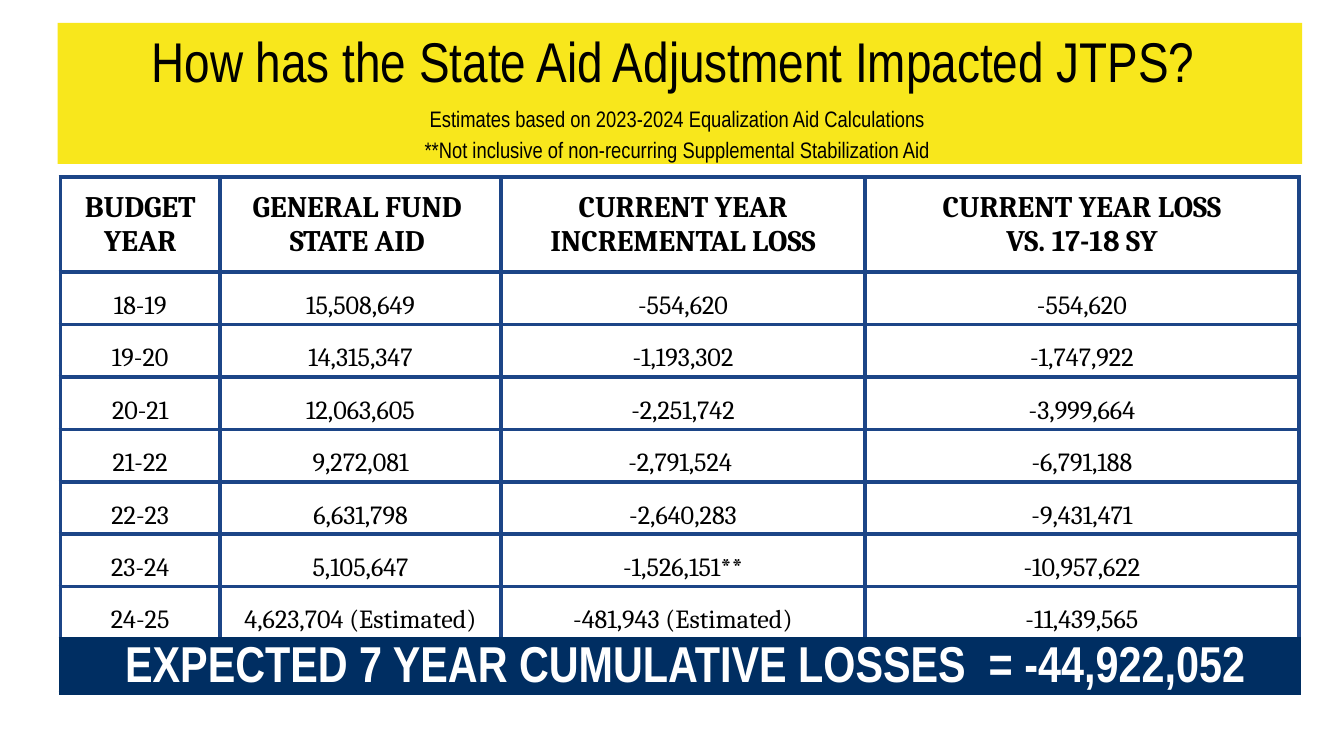
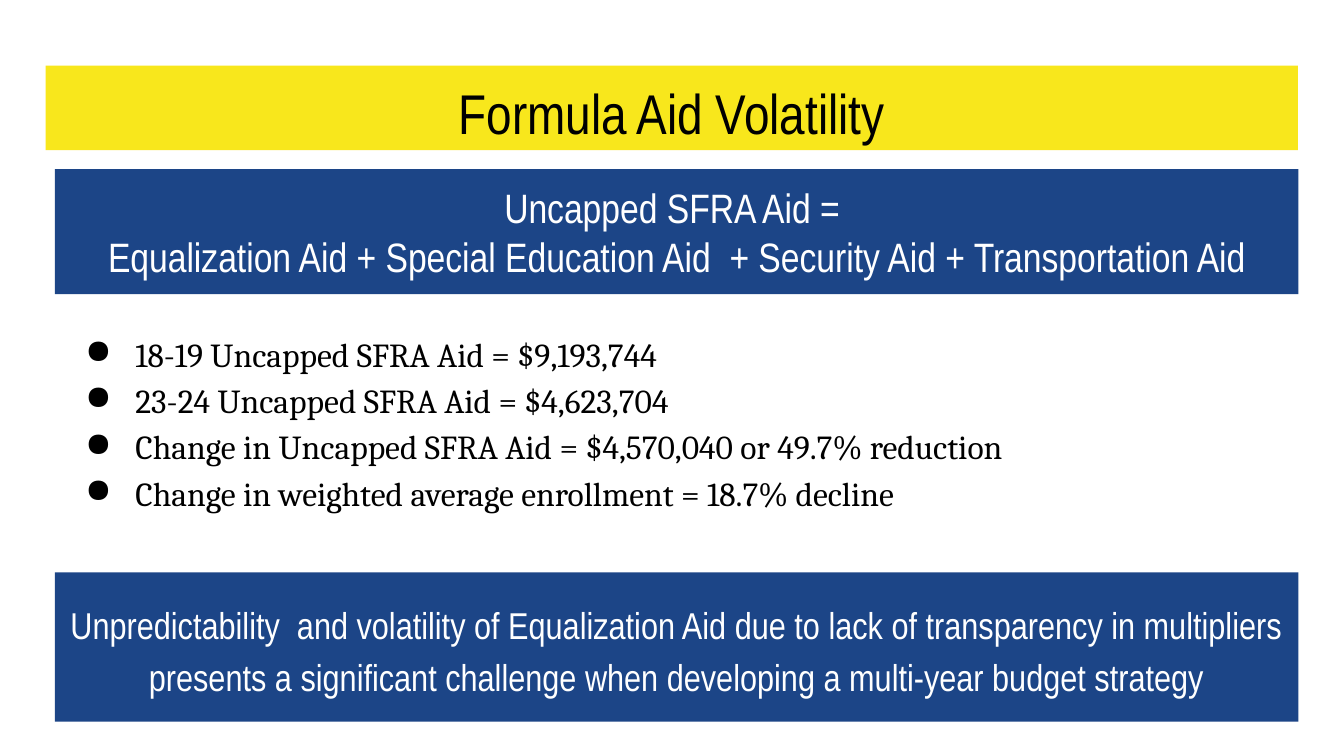
from dataclasses import dataclass

from lxml.etree import SubElement
from pptx import Presentation
from pptx.dml.color import RGBColor
from pptx.enum.shapes import MSO_SHAPE
from pptx.enum.text import MSO_ANCHOR, MSO_AUTO_SIZE, PP_ALIGN
from pptx.oxml import parse_xml
from pptx.oxml.ns import nsdecls, qn
from pptx.util import Cm, Pt


@dataclass(frozen=True)
class Theme:
    yellow: str = "F8E71C"
    blue: str = "1C4587"
    navy: str = "002E62"
    black: str = "000000"
    white: str = "FFFFFF"
    heading_font: str = "Arial Narrow"
    body_font: str = "Cambria"
    title_size: int = 30
    note_size: int = 12
    total_size: int = 27
    formula_size: int = 22
    warning_size: int = 20
    list_size: int = 18
    header_size: int = 16
    cell_size: int = 14
    border_width: float = 2.25


THEME = Theme()
INSET = 0.25

HEADINGS = ["BUDGET YEAR", "GENERAL FUND \nSTATE AID ",
            "CURRENT YEAR INCREMENTAL LOSS", "CURRENT YEAR LOSS\nVS. 17-18 SY"]
AID_BY_YEAR = [
    ["18-19", "15,508,649", "-554,620", "-554,620"],
    ["19-20", "14,315,347", "-1,193,302", "-1,747,922"],
    ["20-21", "12,063,605", "-2,251,742", "-3,999,664"],
    ["21-22", "9,272,081", "-2,791,524 ", "-6,791,188"],
    ["22-23", "6,631,798", "-2,640,283", "-9,431,471"],
    ["23-24", "5,105,647", "-1,526,151**", "-10,957,622"],
    ["24-25", "4,623,704 (Estimated)", "-481,943 (Estimated)", "-11,439,565"],
]
TOTAL = " EXPECTED 7 YEAR CUMULATIVE LOSSES  = -44,922,052"
COLUMN_WIDTHS = [3.02, 5.31, 6.88, 8.2]
HEADER_HEIGHT, ROW_HEIGHT = 1.52, 0.99


# Text and fill
def paint(target, color):
    target.fill.solid()
    target.fill.fore_color.rgb = RGBColor.from_string(color)


def style_paragraph(paragraph, size, color=THEME.black, font=THEME.heading_font,
                    bold=False, align=PP_ALIGN.CENTER, spacing=1.0):
    paragraph.alignment = align
    paragraph.line_spacing = spacing
    for run in paragraph.runs:
        run.font.name = font
        run.font.size = Pt(size)
        run.font.bold = bold
        run.font.color.rgb = RGBColor.from_string(color)


def write(frame, text, size, **style):
    frame.text = text
    for paragraph in frame.paragraphs:
        style_paragraph(paragraph, size, **style)


def set_frame(frame, anchor, top_inset=INSET):
    frame.word_wrap = True
    frame.auto_size = MSO_AUTO_SIZE.NONE
    frame.vertical_anchor = anchor
    frame.margin_left = frame.margin_right = frame.margin_bottom = Cm(INSET)
    frame.margin_top = Cm(top_inset)


# Title band, with optional smaller notes under the title
def add_title(slide, text, box, notes=(), top_inset=INSET):
    title = slide.shapes.title
    title.left, title.top, title.width, title.height = map(Cm, box)
    paint(title, THEME.yellow)
    frame = title.text_frame
    set_frame(frame, MSO_ANCHOR.TOP, top_inset)
    write(frame, text, THEME.title_size)
    for note, space in notes:
        line = frame.add_paragraph()
        line.text = note
        line.space_before = Pt(space)
        style_paragraph(line, THEME.note_size)


# Blue statement band
def add_band(slide, text, box, size, spacing=1.0):
    band = slide.shapes.add_shape(MSO_SHAPE.RECTANGLE, *map(Cm, box))
    band.shadow.inherit = False
    paint(band, THEME.blue)
    band.line.fill.background()
    set_frame(band.text_frame, MSO_ANCHOR.MIDDLE)
    write(band.text_frame, text, size, color=THEME.white, spacing=spacing)


# Bulleted list
def add_bullets(slide, items, box):
    facts = slide.shapes.add_textbox(*map(Cm, box)).text_frame
    set_frame(facts, MSO_ANCHOR.TOP)
    write(facts, "\n".join(items), THEME.list_size, font=THEME.body_font,
          align=PP_ALIGN.LEFT, spacing=1.15)
    for paragraph in facts.paragraphs:
        properties = paragraph._p.get_or_add_pPr()
        properties.set("marL", str(Cm(1.27)))
        properties.set("indent", str(Cm(-0.95)))
        bullet_color = SubElement(properties, qn("a:buClr"))
        SubElement(bullet_color, qn("a:srgbClr"), val=THEME.black)
        SubElement(properties, qn("a:buChar"), char="●")


# Table
def set_borders(cell, color, bottom=None):
    sides = {"lnL": color, "lnR": color, "lnT": color, "lnB": bottom or color}
    properties = cell._tc.get_or_add_tcPr()
    for position, (side, side_color) in enumerate(sides.items()):
        properties.insert(position, parse_xml(
            f'<a:{side} {nsdecls("a")} w="{Pt(THEME.border_width)}"><a:solidFill>'
            f'<a:srgbClr val="{side_color}"/></a:solidFill></a:{side}>'))


def fill_cell(cell, text, size, margin=0.0, anchor=MSO_ANCHOR.MIDDLE, **style):
    cell.margin_left = cell.margin_right = Cm(margin)
    cell.margin_top = cell.margin_bottom = Cm(margin)
    cell.vertical_anchor = anchor
    write(cell.text_frame, text, size, **style)


def add_aid_table(slide, left, top):
    row_count = len(AID_BY_YEAR) + 2
    height = HEADER_HEIGHT + ROW_HEIGHT * (row_count - 1)
    table = slide.shapes.add_table(row_count, len(HEADINGS), Cm(left), Cm(top),
                                   Cm(sum(COLUMN_WIDTHS)), Cm(height)).table
    table.first_row = table.horz_banding = False
    for column, width in zip(table.columns, COLUMN_WIDTHS):
        column.width = Cm(width)
    for index, row in enumerate(table.rows):
        row.height = Cm(ROW_HEIGHT if index else HEADER_HEIGHT)

    for column, heading in enumerate(HEADINGS):
        fill_cell(table.cell(0, column), heading, THEME.header_size, INSET,
                  MSO_ANCHOR.TOP, font=THEME.body_font, bold=True)
    for index, year in enumerate(AID_BY_YEAR, start=1):
        for column, value in enumerate(year):
            fill_cell(table.cell(index, column), value, THEME.cell_size,
                      font=THEME.body_font, spacing=1.5)

    # Total row across all columns
    total_row = row_count - 1
    total = table.cell(total_row, 0)
    total.merge(table.cell(total_row, len(HEADINGS) - 1))
    fill_cell(total, TOTAL, THEME.total_size, color=THEME.white, bold=True, spacing=1.15)

    for index in range(row_count):
        for column in range(len(HEADINGS)):
            cell = table.cell(index, column)
            if index == total_row:
                paint(cell, THEME.navy)
                set_borders(cell, THEME.navy)
            else:
                cell.fill.background()
                above_total = index == total_row - 1
                set_borders(cell, THEME.blue, THEME.navy if above_total else None)


# Slides
def build_impact(slide):
    add_title(slide, "How has the State Aid Adjustment Impacted JTPS? ",
              (1.09, 0.43, 23.52, 2.67), top_inset=0.08,
              notes=[("Estimates based on 2023-2024 Equalization Aid Calculations ", 6),
                     ("**Not inclusive of non-recurring Supplemental Stabilization Aid ", 2)])
    add_aid_table(slide, 1.14, 3.35)


def build_volatility(slide):
    left, width = 1.04, 23.5
    add_title(slide, "Formula Aid Volatility", (0.86, 1.24, 23.67, 1.6))
    add_band(slide, "Uncapped SFRA Aid = \nEqualization Aid + Special Education Aid  "
             "+ Security Aid + Transportation Aid",
             (left, 3.2, width, 2.36), THEME.formula_size)
    add_bullets(slide, ["18-19 Uncapped SFRA Aid = $9,193,744",
                        "23-24 Uncapped SFRA Aid = $4,623,704",
                        "Change in Uncapped SFRA Aid = $4,570,040 or 49.7% reduction",
                        "Change in weighted average enrollment = 18.7% decline"],
                (left, 5.94, width, 4.22))
    add_band(slide, "Unpredictability  and volatility of Equalization Aid due to lack of "
             "transparency in multipliers presents a significant challenge when "
             "developing a multi-year budget strategy",
             (left, 10.82, width, 2.82), THEME.warning_size, spacing=1.15)


def main():
    deck = Presentation()
    deck.slide_width, deck.slide_height = Cm(25.4), Cm(14.29)
    title_only = deck.slide_layouts[5]
    for build in (build_impact, build_volatility):
        build(deck.slides.add_slide(title_only))
    deck.save("out.pptx")


if __name__ == "__main__":
    main()
